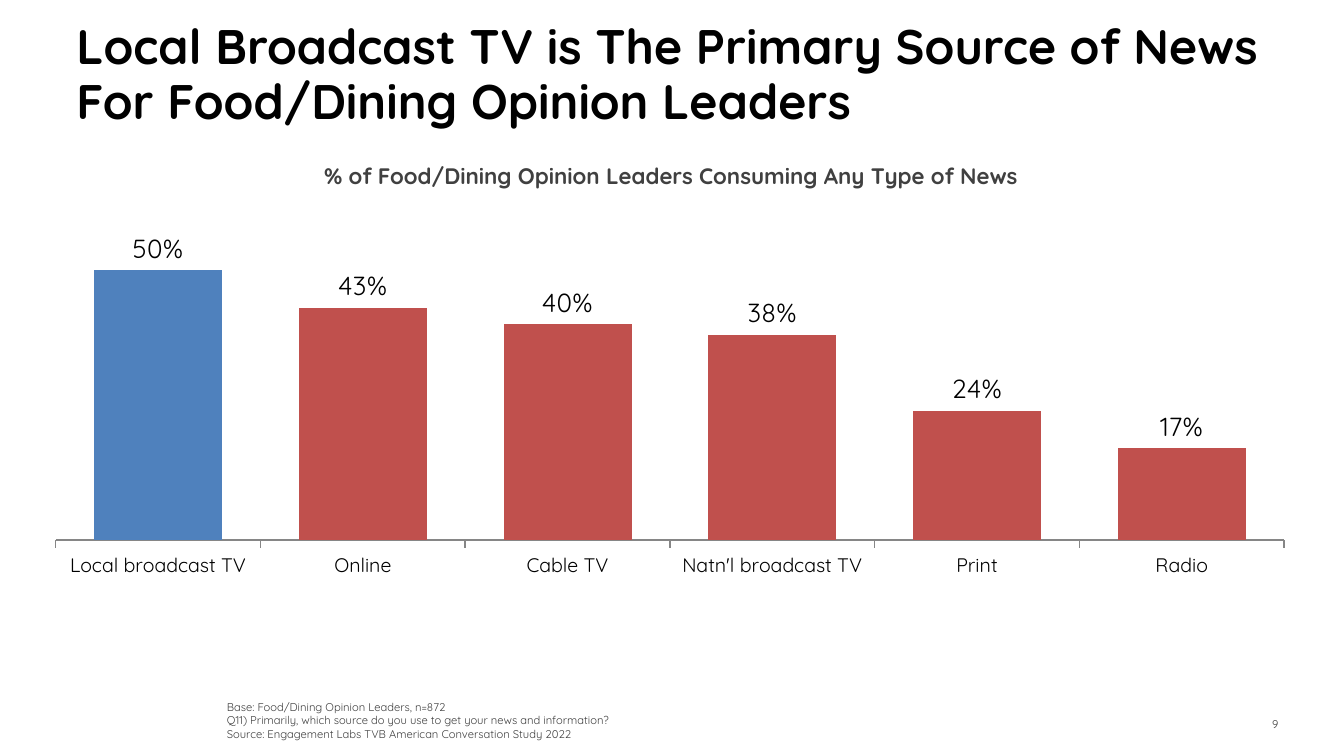
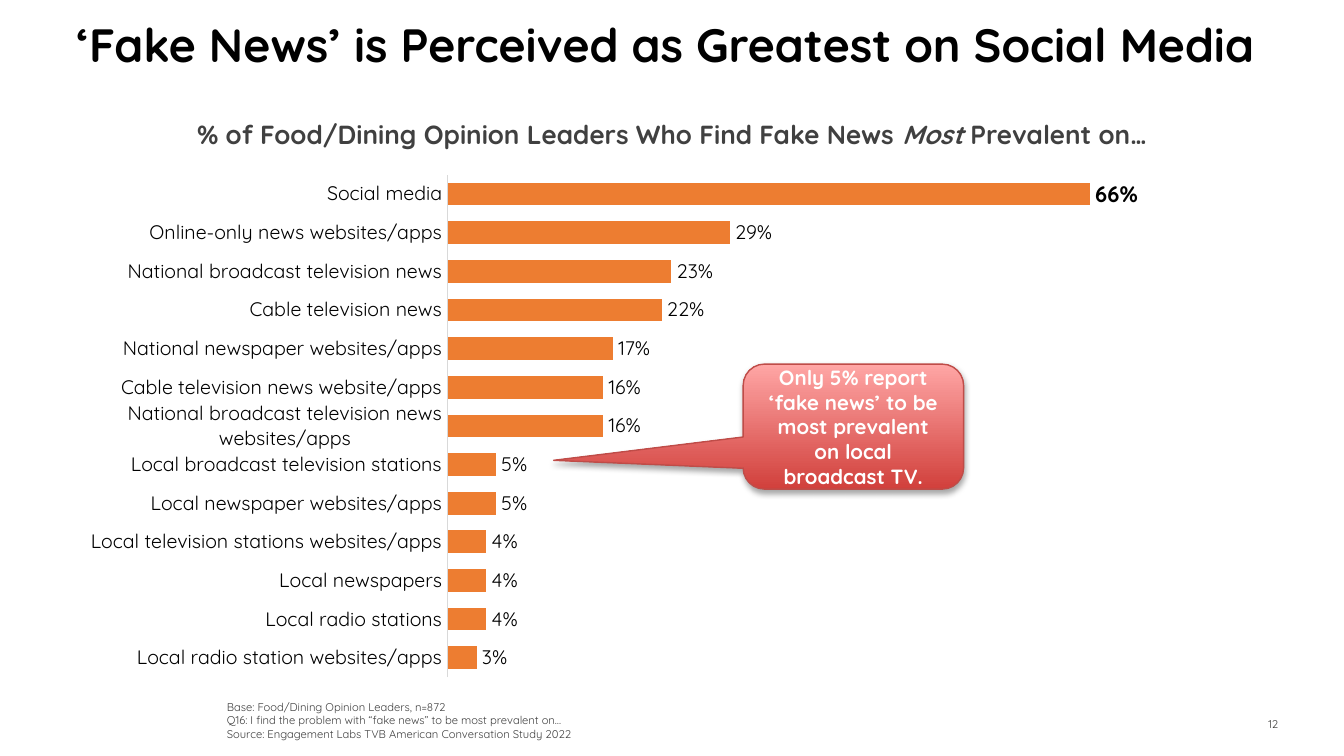
from dataclasses import dataclass
from typing import Optional

import lxml.etree
import pptx
import pptx.chart.chart
import pptx.chart.data
import pptx.dml.color
import pptx.enum.chart
import pptx.enum.shapes
import pptx.enum.text
import pptx.oxml.ns
import pptx.slide
import pptx.text.text
import pptx.util
from pptx.util import Inches

FONT = "Quicksand"
BLACK = pptx.dml.color.RGBColor(0x00, 0x00, 0x00)
WHITE = pptx.dml.color.RGBColor(0xFF, 0xFF, 0xFF)
DARK_GREY = pptx.dml.color.RGBColor(0x40, 0x40, 0x40)
PAGE_GREY = pptx.dml.color.RGBColor(0x3C, 0x3C, 0x3A)
AXIS_GREY = pptx.dml.color.RGBColor(0x86, 0x86, 0x86)
PALE_GREY = pptx.dml.color.RGBColor(0xD9, 0xD9, 0xD9)
BLUE = pptx.dml.color.RGBColor(0x4F, 0x81, 0xBD)
RED = pptx.dml.color.RGBColor(0xC0, 0x50, 0x4D)
ORANGE = pptx.dml.color.RGBColor(0xED, 0x7D, 0x31)
CALLOUT_DARK = pptx.dml.color.RGBColor(0xD1, 0x40, 0x3C)
CALLOUT_LIGHT = pptx.dml.color.RGBColor(0xFF, 0xA6, 0xA5)
CALLOUT_EDGE = pptx.dml.color.RGBColor(0xBF, 0x4C, 0x48)

ALIGN = pptx.enum.text.PP_ALIGN
ANCHOR = pptx.enum.text.MSO_ANCHOR
AUTO_SIZE = pptx.enum.text.MSO_AUTO_SIZE
CHART_TYPE = pptx.enum.chart.XL_CHART_TYPE
TICK = pptx.enum.chart.XL_TICK_MARK

BASE_NOTE = "Base: Food/Dining Opinion Leaders, n=872"
SOURCE_NOTE = "Source: Engagement Labs TVB American Conversation Study 2022"


@dataclass(frozen=True)
class Box:
    left: float
    top: float
    width: float
    height: float

    def lengths(self) -> tuple[int, int, int, int]:
        return (Inches(self.left), Inches(self.top),
                Inches(self.width), Inches(self.height))


@dataclass(frozen=True)
class TextStyle:
    size: float
    color: pptx.dml.color.RGBColor
    bold: bool = False
    align: ALIGN = ALIGN.LEFT
    anchor: ANCHOR = ANCHOR.TOP
    wrap: bool = True
    auto_size: AUTO_SIZE = AUTO_SIZE.NONE
    inset_top: float = 0.05
    line_spacing: float = 1.0


@dataclass(frozen=True)
class Run:
    text: str
    italic: bool = False


@dataclass(frozen=True)
class BarChart:
    kind: CHART_TYPE
    box: Box
    plot: Box  # inches from the chart's top left corner
    values: dict[str, float]
    color: pptx.dml.color.RGBColor
    gap: int
    minimum: float
    maximum: float
    label_size: float
    axis_color: pptx.dml.color.RGBColor
    tick: TICK
    reverse: bool = False
    first_color: Optional[pptx.dml.color.RGBColor] = None
    first_label_size: Optional[float] = None


@dataclass(frozen=True)
class SurveySlide:
    title: str
    title_size: float
    title_box: Box
    subtitle: list[Run]
    subtitle_size: float
    subtitle_box: Box
    chart: BarChart
    question: str
    page: int


NEWS_SOURCES = SurveySlide(
    title="Local Broadcast TV is The Primary Source of News "
          "For Food/Dining Opinion Leaders",
    title_size=26,
    title_box=Box(0.47, 0.15, 9.26, 0.89),
    subtitle=[Run("% of Food/Dining Opinion Leaders Consuming Any Type of News")],
    subtitle_size=12,
    subtitle_box=Box(2.28, 1.16, 5.43, 0.3),
    chart=BarChart(
        kind=CHART_TYPE.COLUMN_CLUSTERED,
        box=Box(0.41, 1.29, 9.15, 3.93),
        plot=Box(0, 0.32, 9.15, 2.81),
        values={
            "Local broadcast TV": 0.50,
            "Online": 0.43,
            "Cable TV": 0.40,
            "Natn'l broadcast TV": 0.38,
            "Print": 0.24,
            "Radio": 0.17,
        },
        color=RED, first_color=BLUE, gap=60, minimum=-0.1, maximum=0.6,
        label_size=14, axis_color=AXIS_GREY, tick=TICK.OUTSIDE),
    question="Q11) Primarily, which source do you use to get your news "
             "and information?",
    page=9)

FAKE_NEWS = SurveySlide(
    title="‘Fake News’ is Perceived as Greatest on Social Media",
    title_size=25,
    title_box=Box(0.47, 0.15, 9.19, 0.68),
    subtitle=[Run("% of Food/Dining Opinion Leaders Who Find Fake News "),
              Run("Most", italic=True), Run(" Prevalent on…")],
    subtitle_size=14,
    subtitle_box=Box(1.31, 0.83, 7.38, 0.34),
    chart=BarChart(
        kind=CHART_TYPE.BAR_CLUSTERED,
        box=Box(0.51, 1.16, 9.07, 4.03),
        plot=Box(2.82, 0.14, 5.07, 3.74),
        values={
            "Social media": 0.66,
            "Online-only news websites/apps": 0.29,
            "National broadcast television news": 0.23,
            "Cable television news": 0.22,
            "National newspaper websites/apps": 0.17,
            "Cable television news website/apps": 0.16,
            "National broadcast television news websites/apps": 0.16,
            "Local broadcast television stations": 0.05,
            "Local newspaper websites/apps": 0.05,
            "Local television stations websites/apps": 0.04,
            "Local newspapers": 0.04,
            "Local radio stations": 0.04,
            "Local radio station websites/apps": 0.03,
        },
        color=ORANGE, gap=70, minimum=0, maximum=0.7, label_size=10.5,
        axis_color=PALE_GREY, tick=TICK.NONE, reverse=True,
        first_label_size=12),
    question="Q16: I find the problem with “fake news” to be most prevalent on…",
    page=12)


def style_font(font: pptx.text.text.Font, size: float,
               color: pptx.dml.color.RGBColor, bold: bool = False) -> None:
    font.name = FONT
    font.size = pptx.util.Pt(size)
    font.color.rgb = color
    font.bold = bold


def add_run(paragraph, run: Run, style: TextStyle) -> None:
    added = paragraph.add_run()
    added.text = run.text
    style_font(added.font, style.size, style.color, style.bold)
    if run.italic:
        added.font.italic = True


def add_text(slide: pptx.slide.Slide, box: Box, paragraphs: list[list[Run]],
             style: TextStyle) -> None:
    frame = slide.shapes.add_textbox(*box.lengths()).text_frame
    frame.word_wrap = style.wrap
    frame.auto_size = style.auto_size
    frame.vertical_anchor = style.anchor
    frame.margin_top = Inches(style.inset_top)
    for index, runs in enumerate(paragraphs):
        paragraph = frame.add_paragraph() if index else frame.paragraphs[0]
        paragraph.alignment = style.align
        paragraph.line_spacing = style.line_spacing
        for run in runs:
            add_run(paragraph, run, style)


def set_plot_area(chart: pptx.chart.chart.Chart, design: BarChart) -> None:
    """Fix the inner plot area, which the file states as chart fractions."""
    qn = pptx.oxml.ns.qn
    plot_area = chart.plots[0]._element.getparent()
    for automatic in plot_area.findall(qn("c:layout")):
        plot_area.remove(automatic)
    layout = lxml.etree.Element(qn("c:layout"))
    manual = lxml.etree.SubElement(layout, qn("c:manualLayout"))
    box, plot = design.box, design.plot
    settings = {"layoutTarget": "inner", "xMode": "edge", "yMode": "edge",
                "x": plot.left / box.width, "y": plot.top / box.height,
                "w": plot.width / box.width, "h": plot.height / box.height}
    for tag, value in settings.items():
        lxml.etree.SubElement(manual, qn(f"c:{tag}")).set("val", str(value))
    plot_area.insert(0, layout)


def add_bar_chart(slide: pptx.slide.Slide, design: BarChart) -> None:
    data = pptx.chart.data.CategoryChartData(number_format="0%")
    data.categories = list(design.values)
    data.add_series("Series 1", list(design.values.values()))
    chart = slide.shapes.add_chart(design.kind, *design.box.lengths(), data).chart
    chart.has_legend = False
    chart.has_title = False
    style_font(chart.font, 10.5, BLACK)
    set_plot_area(chart, design)

    value_axis = chart.value_axis
    value_axis.minimum_scale = design.minimum
    value_axis.maximum_scale = design.maximum
    value_axis.has_major_gridlines = False
    value_axis.visible = False

    category_axis = chart.category_axis
    category_axis.major_tick_mark = design.tick
    category_axis.reverse_order = design.reverse
    category_axis.format.line.color.rgb = design.axis_color
    category_axis.format.line.width = pptx.util.Pt(0.75)
    style_font(category_axis.tick_labels.font, 10.5, BLACK)

    plot = chart.plots[0]
    plot.gap_width = design.gap
    plot.vary_by_categories = False
    series = plot.series[0]
    series.format.fill.solid()
    series.format.fill.fore_color.rgb = design.color
    labels = series.data_labels
    labels.show_value = True
    labels.number_format = "0%"
    labels.number_format_is_linked = False
    labels.position = pptx.enum.chart.XL_LABEL_POSITION.OUTSIDE_END
    style_font(labels.font, design.label_size, BLACK)

    if design.first_color is not None:
        first_fill = series.points[0].format.fill
        first_fill.solid()
        first_fill.fore_color.rgb = design.first_color
    if design.first_label_size is not None:
        first_label = series.points[0].data_label
        style_font(first_label.font, design.first_label_size, BLACK, bold=True)
        first_label.position = labels.position


def add_callout(slide: pptx.slide.Slide, box: Box, lines: list[str]) -> None:
    callout = slide.shapes.add_shape(
        pptx.enum.shapes.MSO_SHAPE.ROUNDED_RECTANGULAR_CALLOUT, *box.lengths())
    for index, adjustment in enumerate((-1.36, 0.27, 0.17)):
        callout.adjustments[index] = adjustment
    callout.fill.gradient()
    callout.fill.gradient_angle = 90
    for stop, position, color in zip(callout.fill.gradient_stops, (0, 1),
                                     (CALLOUT_DARK, CALLOUT_LIGHT)):
        stop.position = position
        stop.color.rgb = color
    callout.line.color.rgb = CALLOUT_EDGE
    callout.line.width = pptx.util.Pt(0.75)

    callout.shadow.inherit = False
    qn = pptx.oxml.ns.qn
    effects = callout._element.spPr.find(qn("a:effectLst"))
    shadow = lxml.etree.SubElement(
        effects, qn("a:outerShdw"), blurRad="40000", dist="23000",
        dir="5400000", rotWithShape="0")
    shade = lxml.etree.SubElement(shadow, qn("a:srgbClr"), val=str(BLACK))
    lxml.etree.SubElement(shade, qn("a:alpha"), val="35000")

    frame = callout.text_frame
    frame.word_wrap = True
    frame.vertical_anchor = ANCHOR.MIDDLE
    paragraph = frame.paragraphs[0]
    paragraph.alignment = ALIGN.CENTER
    style = TextStyle(11, WHITE, bold=True)
    for index, line in enumerate(lines):
        if index:
            paragraph.add_line_break()
        add_run(paragraph, Run(line), style)


def add_survey_slide(deck, content: SurveySlide) -> pptx.slide.Slide:
    slide = deck.slides.add_slide(deck.slide_layouts[6])
    add_text(slide, Box(9.02, 5.24, 0.59, 0.3), [[Run(str(content.page))]],
             TextStyle(6, PAGE_GREY, align=ALIGN.RIGHT, anchor=ANCHOR.MIDDLE))
    add_bar_chart(slide, content.chart)
    add_text(slide, content.title_box, [[Run(content.title)]],
             TextStyle(content.title_size, BLACK, bold=True, inset_top=0,
                       line_spacing=0.95))
    add_text(slide, content.subtitle_box, [content.subtitle],
             TextStyle(content.subtitle_size, DARK_GREY, bold=True, wrap=False,
                       align=ALIGN.CENTER, auto_size=AUTO_SIZE.SHAPE_TO_FIT_TEXT))
    notes = (BASE_NOTE, content.question, SOURCE_NOTE)
    add_text(slide, Box(1.59, 5.16, 7.53, 0.4), [[Run(note)] for note in notes],
             TextStyle(6, DARK_GREY, anchor=ANCHOR.BOTTOM,
                       auto_size=AUTO_SIZE.SHAPE_TO_FIT_TEXT))
    return slide


def main() -> None:
    deck = pptx.Presentation()
    deck.slide_width = Inches(10)
    deck.slide_height = deck.slide_width * 9 // 16
    add_survey_slide(deck, NEWS_SOURCES)
    fake_news = add_survey_slide(deck, FAKE_NEWS)
    add_callout(fake_news, Box(5.53, 2.71, 1.64, 0.93),
                ["Only 5% report",
                 "‘fake news’ to be most prevalent on local broadcast TV."])
    deck.save("out.pptx")


if __name__ == "__main__":
    main()
